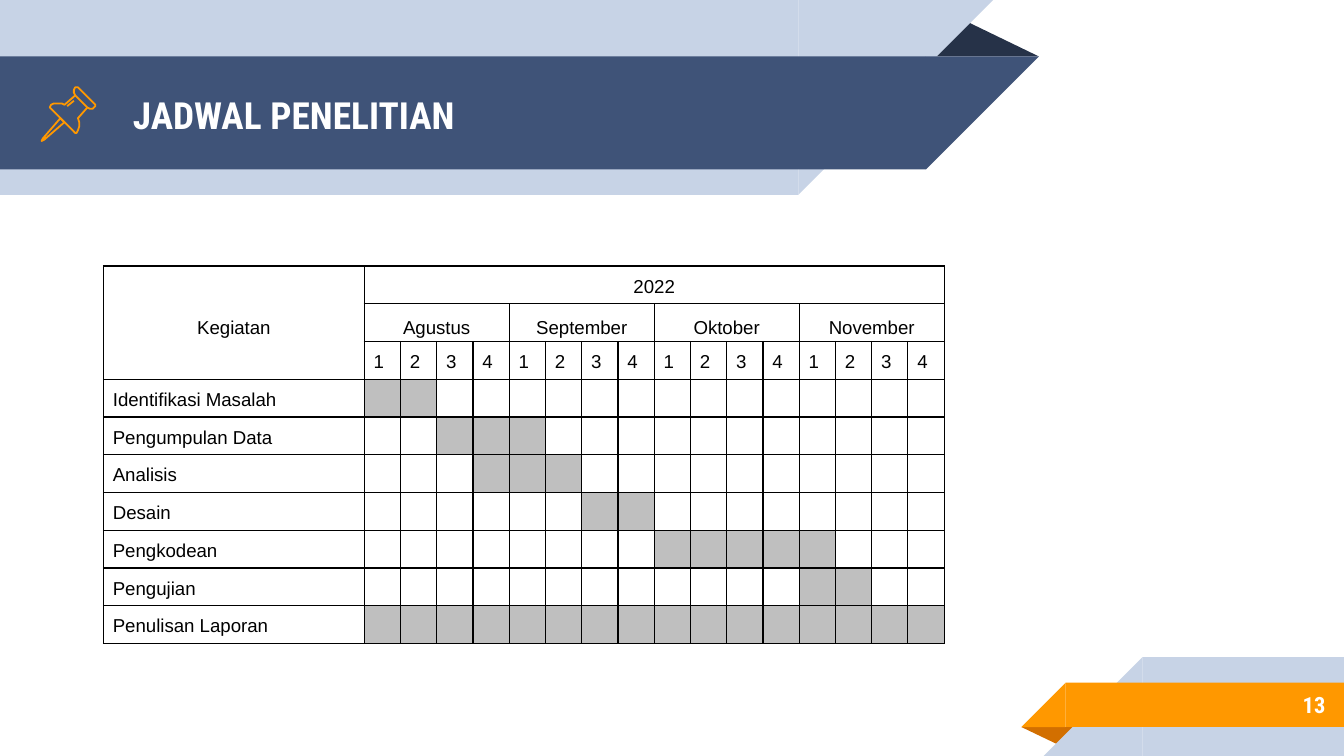
from dataclasses import dataclass

from lxml.etree import SubElement
from pptx import Presentation
from pptx.dml.color import RGBColor
from pptx.enum.shapes import MSO_SHAPE
from pptx.enum.text import MSO_ANCHOR, PP_ALIGN
from pptx.oxml.ns import qn
from pptx.util import Inches, Pt

COLORS = {
    "pale": "C7D3E6", "navy": "3F5378", "dark": "263248", "orange": "FF9800",
    "rust": "D26F00", "gray": "BFBFBF", "black": "000000", "white": "FFFFFF",
}
HEAD_FONT, BODY_FONT = "Roboto Condensed", "Arial"
WIDTH = Inches(10)
HEIGHT = WIDTH * 9 // 16
UNIT = WIDTH // 100  # the slide is a grid 100 units wide


@dataclass
class Box:
    left: float
    top: float
    width: float
    height: float

    def emu(self) -> list[int]:
        return [round(v * UNIT) for v in (self.left, self.top, self.width, self.height)]


@dataclass
class Part:
    kind: MSO_SHAPE
    box: Box
    color: str
    rotation: int = 0


@dataclass
class Label:
    text: str
    box: Box
    size: int
    align: PP_ALIGN


@dataclass
class Outline:
    points: list[tuple[int, int]]  # tenths of a unit
    closed: bool


@dataclass
class Task:
    name: str
    first: int
    last: int


def left_ribbon(top: float, length: float, height: float, color: str) -> list[Part]:
    """Band from the left edge whose end slants back at 45 degrees."""
    return [Part(MSO_SHAPE.RECTANGLE, Box(0, top, length, height), color),
            Part(MSO_SHAPE.RIGHT_TRIANGLE, Box(length, top, height, height), color, 90)]


def right_ribbon(top: float, start: float, height: float, color: str) -> list[Part]:
    """Band to the right edge that begins with a 45 degree slant."""
    return [Part(MSO_SHAPE.RECTANGLE, Box(start, top, 100 - start, height), color),
            Part(MSO_SHAPE.RIGHT_TRIANGLE, Box(start - height, top, height, height), color, 270)]


PARTS = [
    Part(MSO_SHAPE.ISOSCELES_TRIANGLE, Box(76, 54.1, 4.3, 1.4), "rust", 180),
    *right_ribbon(48.9, 85, 7.35, "pale"),
    *right_ribbon(50.8, 79.3, 3.3, "orange"),
    Part(MSO_SHAPE.ISOSCELES_TRIANGLE, Box(68.8, 1.4, 8.5, 2.8), "dark"),
    *left_ribbon(0, 59.4, 14.5, "pale"),
    *left_ribbon(4.2, 68.9, 8.4, "navy"),
]
LABELS = [
    Label("JADWAL PENELITIAN", Box(8.9, 4.3, 60.1, 8.4), 20, PP_ALIGN.LEFT),
    Label("13", Box(83.3, 50.7, 16.3, 3.5), 12, PP_ALIGN.RIGHT),
]
PUSHPIN = [
    Outline([(45, 88), (32, 103), (31, 105), (33, 104), (48, 91)], True),
    Outline([(56, 71), (65, 80), (67, 81), (69, 81), (71, 79), (71, 78), (58, 65),
             (57, 65), (56, 65), (55, 67), (55, 69)], True),
    Outline([(56, 71), (48, 78), (46, 77), (43, 77), (40, 77), (38, 78), (37, 80), (38, 81),
             (55, 98), (56, 99), (57, 99), (58, 97), (59, 94), (59, 91), (58, 88),
             (65, 80)], False),
    Outline([(50, 79), (55, 75)], False),
]
MONTHS = ["Agustus", "September", "Oktober", "November"]
WEEKS = 4
TASKS = [
    Task("Identifikasi Masalah", 1, 2), Task("Pengumpulan Data", 3, 5),
    Task("Analisis", 4, 6), Task("Desain", 7, 8), Task("Pengkodean", 9, 13),
    Task("Pengujian", 13, 14), Task("Penulisan Laporan", 1, 16),
]
HEADER_ROWS = 3
NAME_COL, WEEK_COL, ROW = 19.4, 2.7, 2.81


def rgb(name: str) -> RGBColor:
    return RGBColor.from_string(COLORS[name])


def draw_part(slide, part: Part) -> None:
    s = slide.shapes.add_shape(part.kind, *part.box.emu())
    s.shadow.inherit = False
    s.fill.solid()
    s.fill.fore_color.rgb = rgb(part.color)
    s.line.fill.background()
    s.rotation = part.rotation
    if part.kind == MSO_SHAPE.ISOSCELES_TRIANGLE:
        s.adjustments[0] = 0.32


def add_run(p, text: str, font: str, size: int, color: str, bold: bool) -> None:
    r = p.add_run()
    r.text = text
    r.font.name, r.font.size, r.font.bold = font, Pt(size), bold
    r.font.color.rgb = rgb(color)


def draw_label(slide, label: Label) -> None:
    tf = slide.shapes.add_textbox(*label.box.emu()).text_frame
    tf.word_wrap = True
    tf.vertical_anchor = MSO_ANCHOR.MIDDLE
    tf.margin_left = tf.margin_right = tf.margin_top = tf.margin_bottom = UNIT
    p = tf.paragraphs[0]
    p.alignment = label.align
    add_run(p, label.text, HEAD_FONT, label.size, "white", True)


def draw_outline(slide, outline: Outline) -> None:
    start, *rest = outline.points
    builder = slide.shapes.build_freeform(*start, scale=UNIT / 10)
    builder.add_line_segments(rest, close=outline.closed)
    s = builder.convert_to_shape()
    s.shadow.inherit = False
    s.fill.background()
    s.line.color.rgb = rgb("orange")
    s.line.width = Pt(0.96)


def style_cell(cell) -> None:
    """Clear the fill, set insets and a small empty line, and rule all four sides."""
    cell.margin_left = cell.margin_right = Inches(0.07)
    cell.margin_top = cell.margin_bottom = 0
    p = cell.text_frame.paragraphs[0]
    SubElement(p._p, qn("a:endParaRPr"), sz="1000")
    tc_pr = cell._tc.get_or_add_tcPr()
    for side in ("a:lnL", "a:lnR", "a:lnT", "a:lnB"):
        ln = SubElement(tc_pr, qn(side), w=str(Pt(0.75)))
        fill = SubElement(ln, qn("a:solidFill"))
        SubElement(fill, qn("a:srgbClr"), val=COLORS["black"])
    cell.fill.background()


def write_cell(cell, text: str, align=PP_ALIGN.LEFT, anchor=MSO_ANCHOR.TOP) -> None:
    cell.vertical_anchor = anchor
    p = cell.text_frame.paragraphs[0]
    p.alignment, p.line_spacing, p.space_after = align, 1.5, Pt(8)
    add_run(p, text, BODY_FONT, 10, "black", False)


def draw_schedule(slide) -> None:
    weeks = len(MONTHS) * WEEKS
    rows = HEADER_ROWS + len(TASKS)
    box = Box(7.7, 19.8, NAME_COL + weeks * WEEK_COL, rows * ROW)
    table = slide.shapes.add_table(rows, weeks + 1, *box.emu()).table
    table.first_row = table.horz_banding = False
    for i, col in enumerate(table.columns):
        col.width = round((WEEK_COL if i else NAME_COL) * UNIT)
    for row in table.rows:
        row.height = round(ROW * UNIT)
    for cell in table.iter_cells():
        style_cell(cell)

    table.cell(0, 0).merge(table.cell(HEADER_ROWS - 1, 0))
    write_cell(table.cell(0, 0), "Kegiatan", PP_ALIGN.CENTER, MSO_ANCHOR.MIDDLE)
    table.cell(0, 1).merge(table.cell(0, weeks))
    write_cell(table.cell(0, 1), "2022", PP_ALIGN.CENTER)
    for m, month in enumerate(MONTHS):
        first = 1 + m * WEEKS
        table.cell(1, first).merge(table.cell(1, first + WEEKS - 1))
        write_cell(table.cell(1, first), month, PP_ALIGN.CENTER, MSO_ANCHOR.MIDDLE)
        for w in range(WEEKS):
            write_cell(table.cell(2, first + w), str(w + 1))
    for r, task in enumerate(TASKS, HEADER_ROWS):
        write_cell(table.cell(r, 0), task.name)
        for week in range(task.first, task.last + 1):
            fill = table.cell(r, week).fill
            fill.solid()
            fill.fore_color.rgb = rgb("gray")


def main() -> None:
    prs = Presentation()
    prs.slide_width, prs.slide_height = WIDTH, HEIGHT
    slide = prs.slides.add_slide(prs.slide_layouts[6])
    for part in PARTS:
        draw_part(slide, part)
    for label in LABELS:
        draw_label(slide, label)
    for outline in PUSHPIN:
        draw_outline(slide, outline)
    draw_schedule(slide)
    prs.save("out.pptx")


if __name__ == "__main__":
    main()
